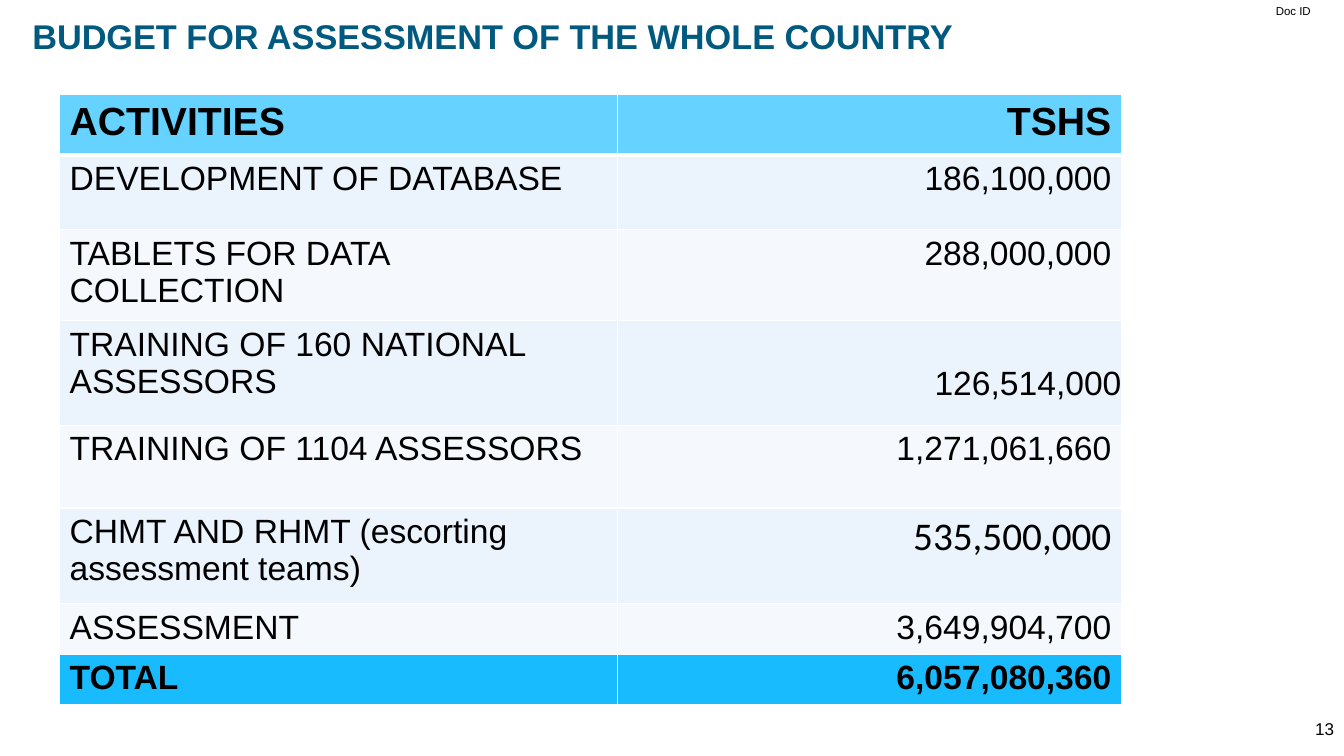
from dataclasses import dataclass

from lxml import etree
from pptx import Presentation
from pptx.dml.color import RGBColor
from pptx.enum.text import MSO_ANCHOR, PP_ALIGN
from pptx.oxml.ns import qn
from pptx.util import Inches, Pt

LEFT, RIGHT = PP_ALIGN.LEFT, PP_ALIGN.RIGHT
TOP, BOTTOM = MSO_ANCHOR.TOP, MSO_ANCHOR.BOTTOM


@dataclass(frozen=True)
class Theme:
    font: str = "Arial"
    alt_font: str = "Calibri"
    title: str = "00597E"
    text: str = "000000"
    border: str = "FFFFFF"
    header: str = "65D2FF"
    bands: tuple = ("EBF3FD", "F5F9FE")
    total: str = "19BBFF"
    title_size: float = 24.5
    header_size: float = 28
    body_size: float = 24
    page_size: float = 12.2
    doc_size: float = 8.2


# label, amount, row height in percent of the slide height
BUDGET = [
    ("ACTIVITIES", "TSHS", 8),
    ("DEVELOPMENT OF DATABASE", "186,100,000", 9.87),
    ("TABLETS FOR DATA COLLECTION", "288,000,000", 11.33),
    ("TRAINING OF 160 NATIONAL ASSESSORS", "126,514,000", 13.87),
    ("TRAINING OF 1104 ASSESSORS", "1,271,061,660", 10.93),
    ("CHMT AND RHMT (escorting assessment teams)", "535,500,000", 12.67),
    ("ASSESSMENT", "3,649,904,700", 6.44),
    ("TOTAL", "6,057,080,360", 6.44),
]
COLUMNS = (41.53, 37.48)
NATIONAL_ROW, ESCORT_ROW = 3, 5


class BudgetSlide:
    """Places elements by percent of the slide's width and height."""

    def __init__(self, prs, theme):
        self.prs, self.theme = prs, theme
        self.slide = prs.slides.add_slide(prs.slide_layouts[5])

    def x(self, share):
        return round(self.prs.slide_width * share / 100)

    def y(self, share):
        return round(self.prs.slide_height * share / 100)

    def box(self, left, top, width, height):
        return self.x(left), self.y(top), self.x(width), self.y(height)

    def set_text(self, tf, text, size, align=LEFT, color=None, bold=False, font=None):
        tf.text = text
        p = tf.paragraphs[0]
        p.alignment = align
        f = p.runs[0].font
        f.name, f.size, f.bold = font or self.theme.font, Pt(size), bold
        f.color.rgb = RGBColor.from_string(color or self.theme.text)

    def title(self, text, *area):
        sp = self.slide.shapes.title
        sp.left, sp.top, sp.width, sp.height = self.box(*area)
        sp.text_frame.vertical_anchor = BOTTOM
        self.set_text(sp.text_frame, text, self.theme.title_size,
                      color=self.theme.title, bold=True)

    def label(self, text, size, *area, inset=0.0):
        tf = self.slide.shapes.add_textbox(*self.box(*area)).text_frame
        tf.word_wrap = True
        tf.margin_left = tf.margin_right = Inches(inset)
        tf.margin_top = tf.margin_bottom = Inches(inset / 2)
        self.set_text(tf, text, size, RIGHT)

    def borders(self, cell, top, bottom):
        tc_pr = cell._tc.get_or_add_tcPr()
        for side, width in (("L", 1), ("R", 1), ("T", top), ("B", bottom)):
            ln = etree.SubElement(tc_pr, qn("a:ln" + side), w=str(Pt(width)))
            fill = etree.SubElement(ln, qn("a:solidFill"))
            etree.SubElement(fill, qn("a:srgbClr"), val=self.theme.border)

    def row_fill(self, row):
        if row == 0:
            return self.theme.header
        if row == len(BUDGET) - 1:
            return self.theme.total
        return self.theme.bands[(row - 1) % 2]

    def table(self, left, top):
        t = self.theme
        heights = [height for *_, height in BUDGET]
        area = self.box(left, top, sum(COLUMNS), sum(heights))
        table = self.slide.shapes.add_table(len(BUDGET), len(COLUMNS), *area).table
        for column, width in zip(table.columns, COLUMNS):
            column.width = self.x(width)
        for row, (*texts, height) in enumerate(BUDGET):
            table.rows[row].height = self.y(height)
            for col, text in enumerate(texts):
                cell = table.cell(row, col)
                self.borders(cell, 3 if row == 1 else 1, 3 if row == 0 else 1)
                cell.fill.solid()
                cell.fill.fore_color.rgb = RGBColor.from_string(self.row_fill(row))
                escort = row == ESCORT_ROW and col == 1
                self.set_text(cell.text_frame, text,
                              t.header_size if row == 0 or escort else t.body_size,
                              RIGHT if col else LEFT,
                              bold=row in (0, len(BUDGET) - 1),
                              font=t.alt_font if escort else t.font)
                cell.vertical_anchor = TOP
        national = table.cell(NATIONAL_ROW, 1)
        national.vertical_anchor = BOTTOM
        national.margin_left = national.margin_right = national.margin_top = 0
        national.margin_bottom = Inches(0.23)


def main():
    prs = Presentation()
    prs.slide_width, prs.slide_height = Inches(13.33), Inches(7.5)
    theme = Theme()
    s = BudgetSlide(prs, theme)
    s.label("Doc ID", theme.doc_size, 90.17, 0.53, 7.35, 1.87)
    s.title("BUDGET FOR ASSESSMENT OF THE WHOLE COUNTRY", 1.65, 1.33, 96.7, 6.8)
    s.label("13", theme.page_size, 76.67, 94.4, 23.33, 5.33, inset=0.1)
    s.table(4.43, 12.53)
    prs.save("out.pptx")


if __name__ == "__main__":
    main()
